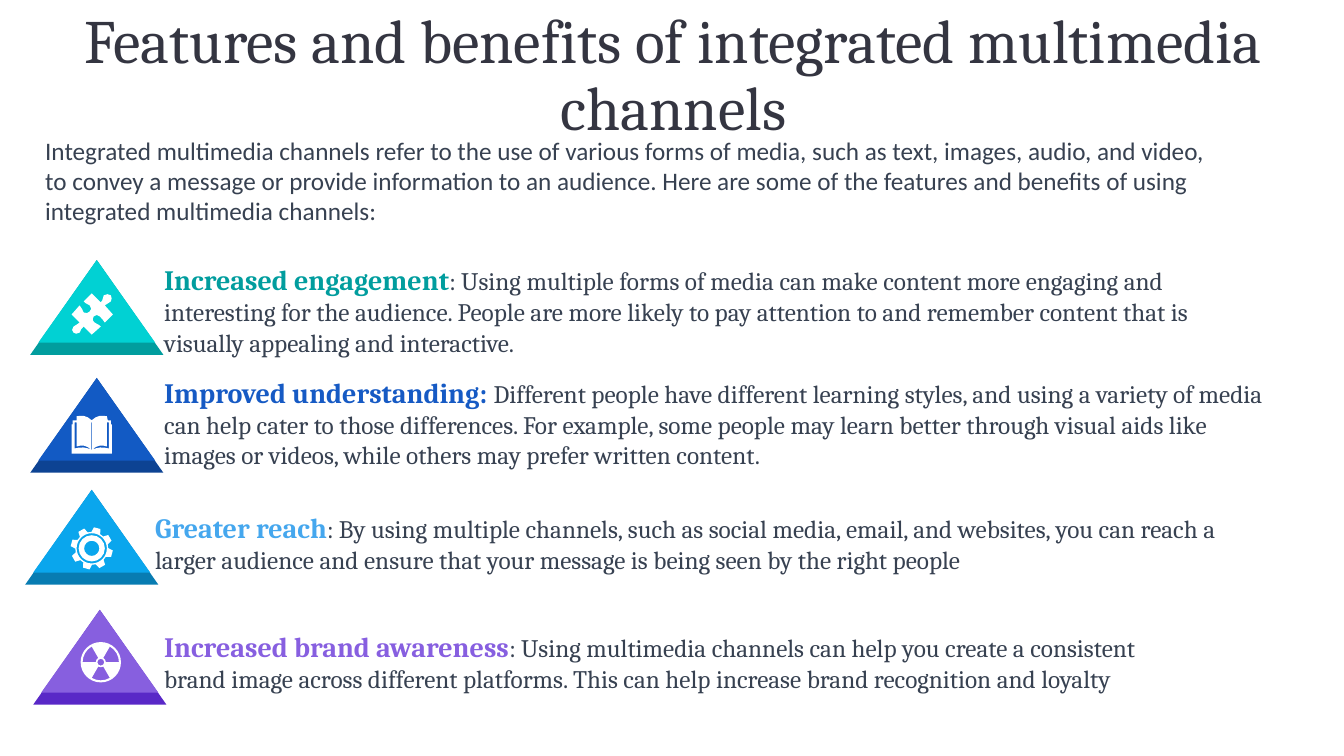
from math import cos, radians, sin, tan

from lxml.etree import SubElement
from pptx import Presentation
from pptx.dml.color import RGBColor
from pptx.enum.shapes import MSO_SHAPE
from pptx.enum.text import MSO_ANCHOR, MSO_AUTO_SIZE, PP_ALIGN
from pptx.oxml.ns import qn
from pptx.util import Inches, Pt

COLORS = {
    "title": "343541", "body": "374151", "icon": "FFFFFF",
    "teal": "01D1D3", "teal_dark": "019D9E",
    "blue": "125AC4", "blue_dark": "0D4393", "blue_text": "165AC4",
    "sky": "0AA6ED", "sky_dark": "087CB2", "sky_text": "45A7EE",
    "purple": "875FDF", "purple_dark": "5928C7", "purple_text": "875FE0",
}

# Outlines in hundredths of an inch around the icon centre:
# pairs are corners, six numbers are a Bezier curve from the point before.
PUZZLE = [
    (19, -19), (20, -17, 20, -15, 19, -13), (17, -10, 15, -12, 13, -9),
    (21, 0), (13, 8), (10, 6, 11, 3, 8, 2), (6, 0, 4, 0, 2, 2),
    (1, 3, 0, 6, 3, 8), (5, 10, 6, 9, 9, 12), (0, 20), (-8, 12),
    (-11, 14, -10, 15, -12, 18), (-14, 20, -17, 19, -18, 18),
    (-20, 17, -20, 14, -18, 12), (-17, 10, -14, 11, -12, 8), (-20, 0),
    (-12, -9), (-9, -7, -10, -4, -8, -2), (-6, -1, -3, -1, -2, -3),
    (0, -4, 0, -7, -2, -9), (-5, -11, -5, -10, -8, -13), (0, -21),
    (9, -12), (12, -15, 10, -16, 12, -19), (14, -21, 17, -20, 19, -19),
]
BOOK_COVER = [
    (-20, 19), (-20, -10), (-19, -10), (-19, -14), (-15, -14), (-15, -18),
    (-10, -19, -5, -19, 0, -14), (5, -19, 10, -19, 15, -18), (16, -14),
    (19, -14), (19, -10), (20, -10), (20, 19),
]
LEFT_PAGE_EDGE = [
    (-17, -12), (-17, 14), (-10, 12, -6, 13, -0.5, 15),
    (-5, 11, -10, 10, -15, 12), (-15, -12),
]
RIGHT_PAGE_EDGE = [tuple(-n if i % 2 == 0 else n for i, n in enumerate(part))
                   for part in LEFT_PAGE_EDGE]
SPINE = [(-0.4, -12), (0.4, -12), (0.4, 15), (-0.4, 15)]


def polar(radius, angle):
    return radius * cos(radians(angle)), radius * sin(radians(angle))


def arc(radius, start=0, end=360):
    """Return a corner followed by Bezier curves of at most 90 degrees."""
    count = -(-abs(end - start) // 90)
    turn = (end - start) / count
    pull = 4 / 3 * tan(radians(turn / 4))
    parts = [polar(radius, start)]
    for i in range(count):
        a, b = start + i * turn, start + (i + 1) * turn
        (ax, ay), (bx, by) = polar(radius, a), polar(radius, b)
        parts.append((ax - pull * ay, ay + pull * ax,
                      bx + pull * by, by - pull * bx, bx, by))
    return parts


def gear_icon():
    teeth = [polar(radius, 15 + 45 * tooth + turn)
             for tooth in range(8)
             for radius, turn in ((16.3, -16), (21, -9), (21, 9), (16.3, 16))]
    return [teeth, arc(15), arc(13), arc(7.5)]


def hazard_icon():
    blades = [arc(18, middle - 30, middle + 30) + arc(5, middle + 30, middle - 30)
              for middle in (90, 210, 330)]
    return [arc(20), arc(3.4), *blades]


def paint(shape, color):
    shape.shadow.inherit = False
    shape.fill.solid()
    shape.fill.fore_color.rgb = RGBColor.from_string(COLORS[color])
    shape.line.fill.background()


def bend(segment, part, origin):
    """Make a straight path segment a Bezier curve."""
    segment.tag = qn("a:cubicBezTo")
    for child in list(segment):
        segment.remove(child)
    for x, y in zip(part[::2], part[1::2]):
        SubElement(segment, qn("a:pt"), x=str(Inches(x / 100) - origin[0]),
                   y=str(Inches(y / 100) - origin[1]))


def add_icon(slide, contours, center_x, center_y):
    """Draw white contours; those inside the first one are holes."""
    center = Inches(center_x), Inches(center_y)
    builder = None
    for contour in contours:
        ends = [(center[0] + Inches(part[-2] / 100), center[1] + Inches(part[-1] / 100))
                for part in contour]
        if builder is None:
            builder = slide.shapes.build_freeform(*ends[0], scale=1.0)
        else:
            builder.move_to(*ends[0])
        builder.add_line_segments(ends[1:], close=True)
    icon = builder.convert_to_shape()
    origin = icon.left - center[0], icon.top - center[1]
    outline = icon._element.find(".//" + qn("a:path"))
    segments = [segment for segment in outline if segment.tag != qn("a:close")]
    parts = [part for contour in contours for part in contour]
    # Closing a contour adds a segment only where its ends differ.
    index = 0
    for contour in contours:
        for part in contour:
            if len(part) == 6:
                bend(segments[index], part, origin)
            index += 1
        while index < len(segments) and segments[index].tag != qn("a:moveTo"):
            index += 1
    paint(icon, "icon")


def add_text(slide, box, runs, font="Cambria", align=PP_ALIGN.LEFT,
             anchor=MSO_ANCHOR.TOP, fit=MSO_AUTO_SIZE.SHAPE_TO_FIT_TEXT,
             line_spacing=None):
    """Place one paragraph of (text, size, color, bold) runs."""
    frame = slide.shapes.add_textbox(*map(Inches, box)).text_frame
    frame.word_wrap = True
    frame.auto_size = fit
    frame.vertical_anchor = anchor
    paragraph = frame.paragraphs[0]
    paragraph.alignment = align
    paragraph.line_spacing = line_spacing
    for text, size, color, bold in runs:
        run = paragraph.add_run()
        run.text = text
        run.font.name = font
        run.font.size = Pt(size)
        run.font.bold = bold
        run.font.color.rgb = RGBColor.from_string(COLORS[color])


def add_badge(slide, left, top, color, contours, icon_offset):
    """Draw a two-tone triangle with its icon."""
    badge = slide.shapes.add_group_shape()
    for inset, width, height, shade in ((0, 1.32, 0.94, color + "_dark"),
                                        (0.08, 1.16, 0.82, color)):
        paint(badge.shapes.add_shape(
            MSO_SHAPE.ISOSCELES_TRIANGLE, Inches(left + inset), Inches(top),
            Inches(width), Inches(height)), shade)
    add_icon(slide, contours, left + icon_offset[0], top + icon_offset[1])


def add_feature(slide, badge, box, heading, heading_color, detail):
    add_badge(slide, *badge)
    add_text(slide, box, [(heading, 20, heading_color, True),
                          (detail, 18, "body", False)])


def add_header(slide):
    add_text(slide, (0.35, 0.37, 12.66, 0.79),
             [("Features and benefits of integrated multimedia channels", 44, "title", False)],
             align=PP_ALIGN.CENTER, anchor=MSO_ANCHOR.MIDDLE,
             fit=MSO_AUTO_SIZE.NONE, line_spacing=0.9)
    add_text(slide, (0.35, 1.29, 11.84, 1.01),
             [("Integrated multimedia channels refer to the use of various forms of media, "
               "such as text, images, audio, and video, to convey a message or provide "
               "information to an audience. Here are some of the features and benefits of "
               "using integrated multimedia channels:", 18, "body", False)], font="Calibri")


FEATURES = [
    ((0.3, 2.58, "teal", [PUZZLE], (0.61, 0.54)), (1.53, 2.56, 11.18, 1.04),
     "Increased engagement", "teal_dark",
     ": Using multiple forms of media can make content more engaging and interesting for "
     "the audience. People are more likely to pay attention to and remember content that "
     "is visually appealing and interactive."),
    ((0.3, 3.75, "blue", [BOOK_COVER, LEFT_PAGE_EDGE, RIGHT_PAGE_EDGE, SPINE],
      (0.61, 0.56)), (1.53, 3.68, 11.18, 1.35), "Improved understanding: ", "blue_text",
     "Different people have different learning styles, and using a variety of media can "
     "help cater to those differences. For example, some people may learn better through "
     "visual aids like images or videos, while others may prefer written content."),
    ((0.25, 4.86, "sky", gear_icon(), (0.66, 0.58)), (1.44, 5.02, 11.1, 0.74),
     "Greater reach", "sky_text",
     ": By using multiple channels, such as social media, email, and websites, you can "
     "reach a larger audience and ensure that your message is being seen by the right people"),
    ((0.33, 6.05, "purple", hazard_icon(), (0.67, 0.52)), (1.53, 6.2, 10.44, 0.74),
     "Increased brand awareness", "purple_text",
     ": Using multimedia channels can help you create a consistent brand image across "
     "different platforms. This can help increase brand recognition and loyalty"),
]

deck = Presentation()
deck.slide_width, deck.slide_height = Inches(13.33), Inches(7.5)
main_slide = deck.slides.add_slide(deck.slide_layouts[6])
add_header(main_slide)
for feature in FEATURES:
    add_feature(main_slide, *feature)
deck.save("out.pptx")
